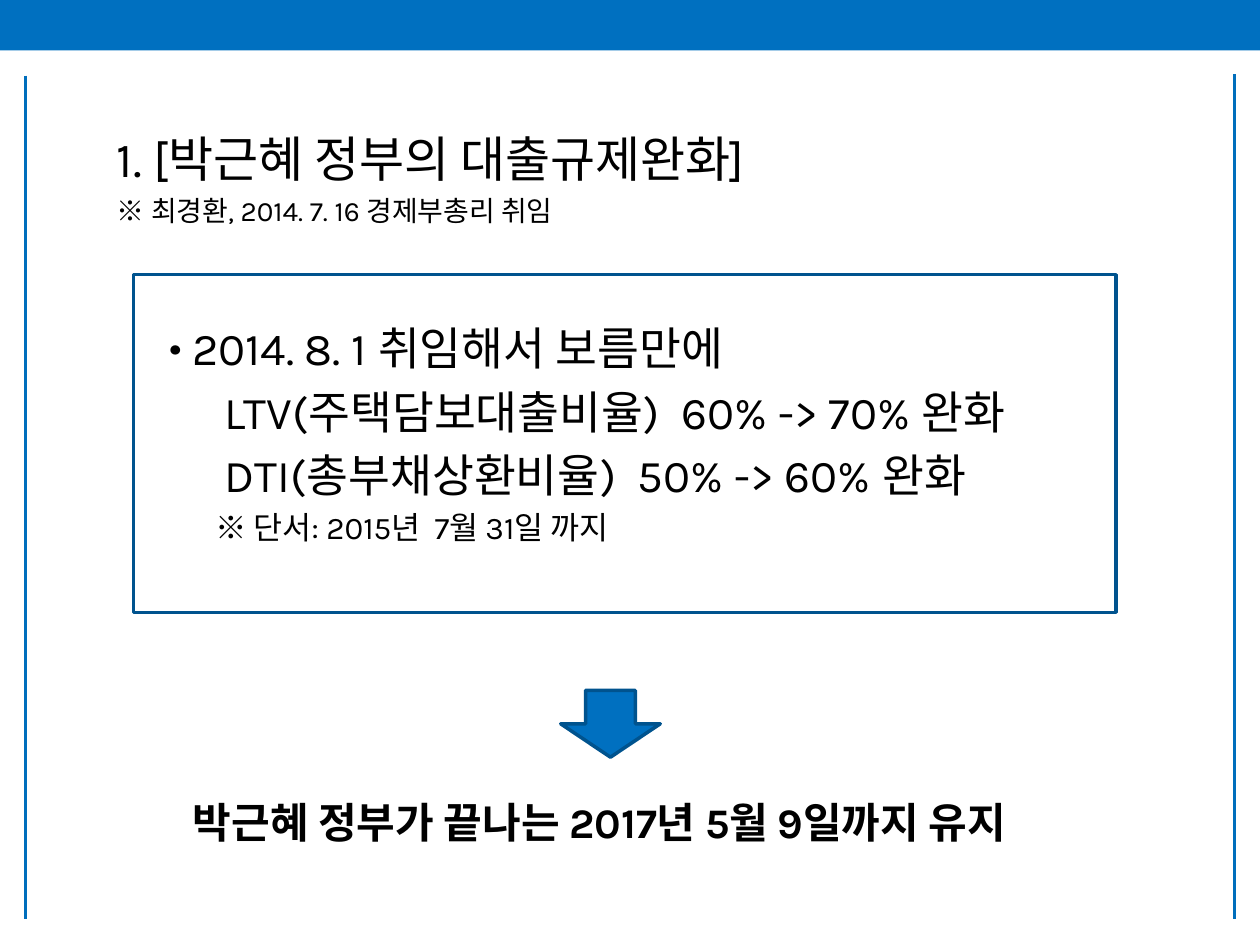
from pptx import Presentation
from pptx.dml.color import RGBColor
from pptx.enum.shapes import MSO_CONNECTOR as Connector, MSO_SHAPE as Shape
from pptx.oxml.ns import qn
from pptx.util import Pt
from lxml.etree import SubElement

COLORS = {"blue": "0070C0", "rule": "006EBC", "outline": "00538E", "text": "000000"}
FONT = "Karla"


def color(name):
    return RGBColor.from_string(COLORS[name])


def add_block(page, kind, left, top, width, height, fill=None, outline=None):
    block = page.shapes.add_shape(kind, Pt(left), Pt(top), Pt(width), Pt(height))
    block.shadow.inherit = False
    if fill:
        block.fill.solid()
        block.fill.fore_color.rgb = color(fill)
    else:
        block.fill.background()
    if outline:
        block.line.color.rgb = color(outline)
        block.line.width = Pt(2)
    else:
        block.line.fill.background()


def add_side_rule(page, x, top, bottom):
    rule = page.shapes.add_connector(Connector.STRAIGHT, Pt(x), Pt(top), Pt(x), Pt(bottom))
    rule.line.color.rgb = color("rule")
    rule.line.width = Pt(1.75)
    SubElement(rule._element.spPr, qn("a:effectLst"))


def add_text(page, left, top, width, height, text, size, bold=False, wrap=True):
    box = page.shapes.add_textbox(Pt(left), Pt(top), Pt(width), Pt(height))
    frame = box.text_frame
    frame.word_wrap = wrap
    frame.text = text
    for para in frame.paragraphs:
        for span in para.runs:
            span.font.name = FONT
            span.font.size = Pt(size)
            span.font.bold = bold
            span.font.color.rgb = color("text")
    return frame


def indent(para, left, bullet=None, hanging=0):
    """Indent a paragraph, with an optional bullet in the hanging space."""
    properties = para._p.get_or_add_pPr()
    properties.set("marL", str(Pt(left)))
    properties.set("indent", str(-Pt(hanging)))
    if bullet:
        SubElement(properties, qn("a:buFont")).set("typeface", FONT)
        SubElement(properties, qn("a:buChar")).set("char", bullet)


def add_measures(page):
    lines = [
        "2014. 8. 1 취임해서 보름만에",
        "LTV(주택담보대출비율)  60% -> 70% 완화",
        "DTI(총부채상환비율)  50% -> 60% 완화",
    ]
    frame = add_text(page, 33.84, 179.28, 572.4, 294.48, "\n".join(lines), 26)
    for para in frame.paragraphs:
        para.space_before = Pt(5.2)
    first, *details = frame.paragraphs
    indent(first, 69, bullet="•", hanging=13)
    for para in details:
        indent(para, 87.5)


def add_conclusion(page):
    frame = add_text(page, 59.76, 423.36, 572.4, 65.52,
                     "박근혜 정부가 끝나는 2017년 5월 9일까지 유지", 24, bold=True)
    frame.margin_top = Pt(31.6)
    indent(frame.paragraphs[0], 43.3)


def main():
    deck = Presentation()
    deck.slide_width, deck.slide_height = Pt(720), Pt(540)
    page = deck.slides.add_slide(deck.slide_layouts[6])

    add_block(page, Shape.RECTANGLE, 0, 0, 720, 28.8, fill="blue")
    add_measures(page)
    add_block(page, Shape.DOWN_ARROW, 320.4, 394.56, 56.88, 38.16, "blue", "outline")
    add_side_rule(page, 14.4, 43.2, 524.88)
    add_side_rule(page, 705.6, 42.48, 524.88)
    add_block(page, Shape.RECTANGLE, 76.32, 156.96, 561.6, 192.96, outline="outline")
    add_text(page, 59.76, 69.84, 415.44, 41.04, "1. [박근혜 정부의 대출규제완화]", 28, wrap=False)
    add_text(page, 59.76, 107.28, 291.6, 26.64,
             "※ 최경환, 2014. 7. 16 경제부총리 취임", 16, wrap=False)
    add_conclusion(page)
    add_text(page, 115.92, 286.56, 264.24, 28.8, "※ 단서: 2015년  7월 31일 까지", 18)

    deck.save("out.pptx")


if __name__ == "__main__":
    main()
